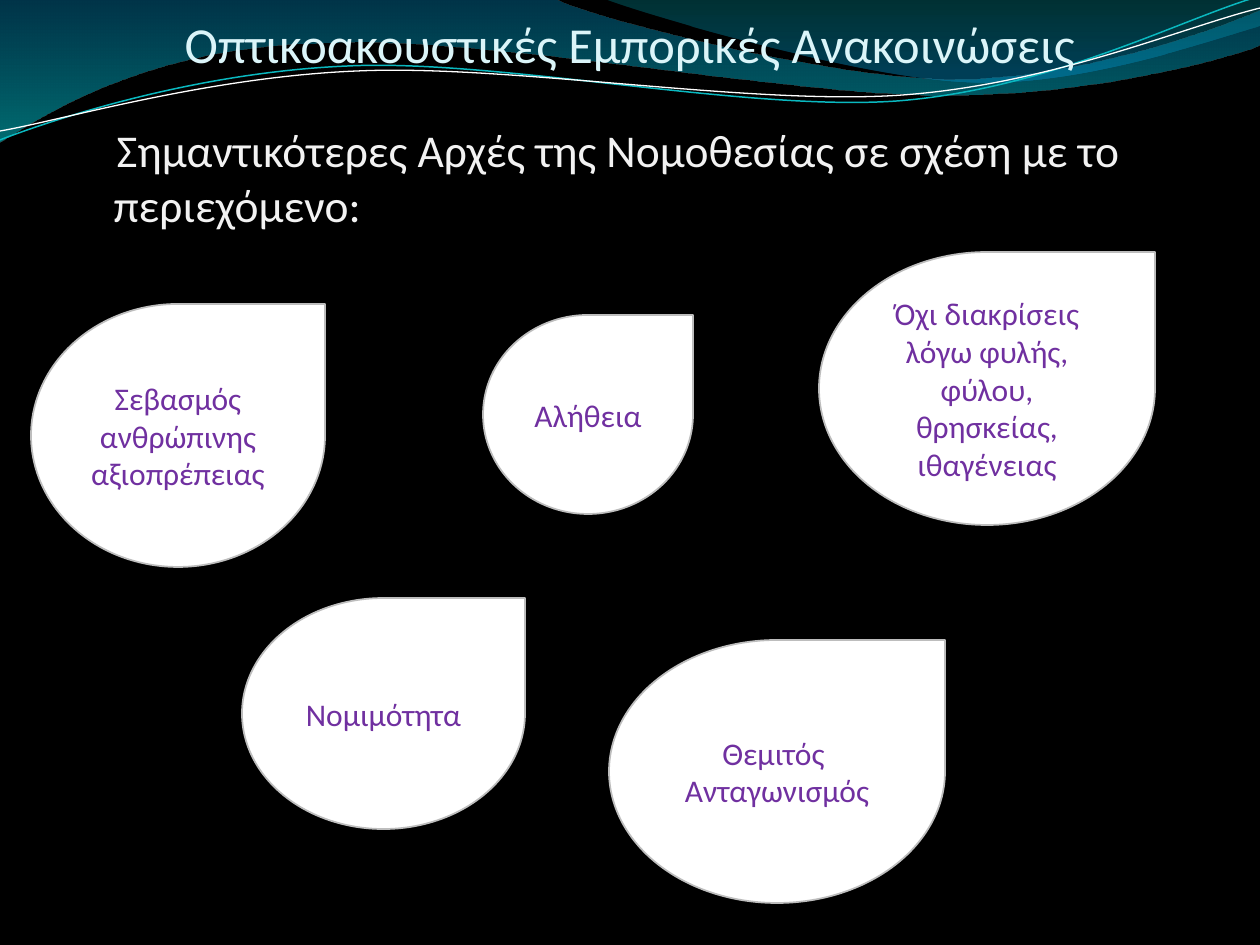
from dataclasses import dataclass
from math import cos, radians, sin

from lxml import etree
from pptx import Presentation
from pptx.dml.color import RGBColor
from pptx.enum.shapes import MSO_SHAPE
from pptx.enum.text import MSO_ANCHOR, MSO_AUTO_SIZE, PP_ALIGN
from pptx.oxml.ns import qn
from pptx.util import Emu, Pt

TEARDROP = MSO_SHAPE.TEAR
CENTER, LEFT = PP_ALIGN.CENTER, PP_ALIGN.LEFT
TOP, MIDDLE, BOTTOM = MSO_ANCHOR.TOP, MSO_ANCHOR.MIDDLE, MSO_ANCHOR.BOTTOM
NO_AUTOFIT = MSO_AUTO_SIZE.NONE
EMU_PER_PX = 914400 / 126
LINE_TILT = 2.7


@dataclass(frozen=True)
class Theme:
    """Colours, font and type sizes of the slide."""

    font: str = "Calibri"
    background: str = "000000"
    title: str = "DBF5F9"
    body: str = "F2F2F2"
    drop_fill: str = "FFFFFF"
    drop_line: str = "BDBDBD"
    drop_text: str = "7030A0"
    wide_wave: tuple = ((0, "0074A1", 45), (1, "00C6CF", 55))
    right_wave: tuple = ((0, "00A1A9", 30), (0.8, "008BBF", 45))
    teal_line: str = "0AB8BF"
    white_line: str = "FFFFFF"
    title_size: float = 28.8
    body_size: float = 26
    drop_size: float = 18


THEME = Theme()

WIDE_WAVE = [
    [(0, 0)], [(554, -1)],
    [(600, 21), (837, 79), (955, 79)], [(1075, 79), (1207, 33), (1260, 11)],
    [(1261, 45)],
    [(1239, 55), (1096, 96), (940, 95)], [(784, 95), (481, 35), (324, 43)],
    [(163, 45), (58, 105), (-1, 142)], [(0, 0)],
]
RIGHT_WAVE = [
    [(604, -1)],
    [(641, 14), (859, 78), (969, 82)], [(1079, 87), (1211, 40), (1260, 26)],
    [(1260, 0)], [(604, -1)],
]
TEAL_LINE = [
    [(0, 140)],
    [(60, 117), (199, 72), (349, 66)], [(498, 59), (747, 112), (898, 101)],
    [(1050, 89), (1182, 19), (1257, -3)],
]
WHITE_LINE = [
    [(0, 131)],
    [(59, 121), (207, 77), (357, 71)], [(508, 64), (752, 106), (903, 95)],
    [(1053, 84), (1186, 26), (1260, 8)],
]

PRINCIPLES = [
    ((31, 304, 294, 263), ["Σεβασμός ανθρώπινης αξιοπρέπειας"]),
    ((819, 252, 336, 273), ["Όχι διακρίσεις λόγω φυλής, φύλου, θρησκείας, ιθαγένειας"]),
    ((609, 640, 336, 263), ["Θεμιτός ", "Ανταγωνισμός"]),
    ((483, 315, 210, 199), ["Αλήθεια"]),
    ((242, 598, 283, 231), ["Νομιμότητα"]),
]


def px(length):
    """Turn pixels into EMU."""
    return Emu(round(length * EMU_PER_PX))


def rgb(code):
    """Turn a hex code into a colour."""
    return RGBColor.from_string(code)


def place(shape, box):
    """Move and size a shape to a pixel box."""
    shape.left, shape.top, shape.width, shape.height = map(px, box)


def write(shape, lines, size, color, align, anchor):
    """Fill a shape with evenly formatted paragraphs."""
    frame = shape.text_frame
    frame.text = "\n".join(lines)
    frame.word_wrap = True
    frame.auto_size = NO_AUTOFIT
    frame.vertical_anchor = anchor
    for para in frame.paragraphs:
        para.alignment = align
        para.font.name = THEME.font
        para.font.size = Pt(size)
        para.font.color.rgb = rgb(color)
    return frame


def turn(segments, center, degrees):
    """Rotate path segments clockwise about a center."""
    middle_x, middle_y = center
    cosine, sine = cos(radians(degrees)), sin(radians(degrees))
    return [
        [(middle_x + (x - middle_x) * cosine - (y - middle_y) * sine,
          middle_y + (x - middle_x) * sine + (y - middle_y) * cosine) for x, y in segment]
        for segment in segments
    ]


def add_path(page, origin, segments, closed):
    """Draw a path of lines and cubic curves behind the title."""
    left, top = origin
    points = [(px(left + x), px(top + y)) for segment in segments for x, y in segment]
    builder = page.shapes.build_freeform(*points[0])
    builder.add_line_segments(points[1:], close=closed)
    shape = builder.convert_to_shape()
    shape.shadow.inherit = False
    steps = iter(list(shape.element.iter(qn("a:lnTo"))))
    for segment in segments[1:]:
        curve = next(steps)
        if len(segment) == 3:
            curve.tag = qn("a:cubicBezTo")
            for _ in range(2):
                step = next(steps)
                curve.append(step[0])
                step.getparent().remove(step)
    page.shapes.title.element.addprevious(shape.element)
    return shape


def add_wave(page, origin, segments, stops):
    """Draw a wave with a translucent vertical gradient."""
    shape = add_path(page, origin, segments, True)
    shape.line.fill.background()
    shape.fill.gradient()
    shape.fill.gradient_angle = 270
    for stop, (position, color, _) in zip(shape.fill.gradient_stops, stops):
        stop.position = position
        stop.color.rgb = rgb(color)
    tints = list(shape.element.iter(qn("a:srgbClr")))
    for tint, (_, _, opacity) in zip(tints, stops):
        etree.SubElement(tint, qn("a:alpha"), val=str(opacity * 1000))


def add_wave_line(page, origin, segments, center, color, width):
    """Draw an open curved line in a tilted frame."""
    shape = add_path(page, origin, turn(segments, center, LINE_TILT), False)
    shape.rotation = 360 - LINE_TILT
    shape.fill.background()
    shape.line.color.rgb = rgb(color)
    shape.line.width = Pt(width)


def add_header_waves(page, origin):
    """Draw the band of waves at the top."""
    add_wave(page, origin, WIDE_WAVE, THEME.wide_wave)
    add_wave(page, origin, RIGHT_WAVE, THEME.right_wave)
    add_wave_line(page, origin, TEAL_LINE, (629, 72), THEME.teal_line, 0.85)
    add_wave_line(page, origin, WHITE_LINE, (629, 74), THEME.white_line, 0.75)


def fill_title(title, box):
    """Place and write the title."""
    place(title, box)
    frame = write(title, ["Οπτικοακουστικές Εμπορικές Ανακοινώσεις"],
                  THEME.title_size, THEME.title, CENTER, BOTTOM)
    frame.margin_left = frame.margin_right = 0
    frame.margin_bottom = px(94)


def fill_body(body, box):
    """Place and write the introduction without a bullet."""
    place(body, box)
    frame = write(body, ["Σημαντικότερες Αρχές της Νομοθεσίας σε σχέση με το περιεχόμενο:"],
                  THEME.body_size, THEME.body, LEFT, TOP)
    frame.paragraphs[0].space_before = Pt(2)
    properties = next(body.element.iter(qn("a:pPr")))
    properties.set("marL", str(px(38)))
    properties.set("indent", str(px(3)))
    properties.find(qn("a:spcBef")).addnext(etree.Element(qn("a:buNone")))


def add_principle(page, box, lines):
    """Draw one teardrop with its principle."""
    drop = page.shapes.add_shape(TEARDROP, *map(px, box))
    drop.shadow.inherit = False
    drop.fill.solid()
    drop.fill.fore_color.rgb = rgb(THEME.drop_fill)
    drop.line.color.rgb = rgb(THEME.drop_line)
    drop.line.width = Pt(1)
    write(drop, lines, THEME.drop_size, THEME.drop_text, CENTER, MIDDLE)


def main():
    """Build and save the deck."""
    deck = Presentation()
    deck.slide_width, deck.slide_height = px(1260), px(945)
    page = deck.slides.add_slide(deck.slide_layouts[1])
    page.background.fill.solid()
    page.background.fill.fore_color.rgb = rgb(THEME.background)
    add_header_waves(page, (0, 0))
    fill_title(page.shapes.title, (63, 0, 1134, 168))
    fill_body(page.placeholders[1], (63, 116, 1134, 756))
    for box, lines in PRINCIPLES:
        add_principle(page, box, lines)
    deck.save("out.pptx")


if __name__ == "__main__":
    main()
